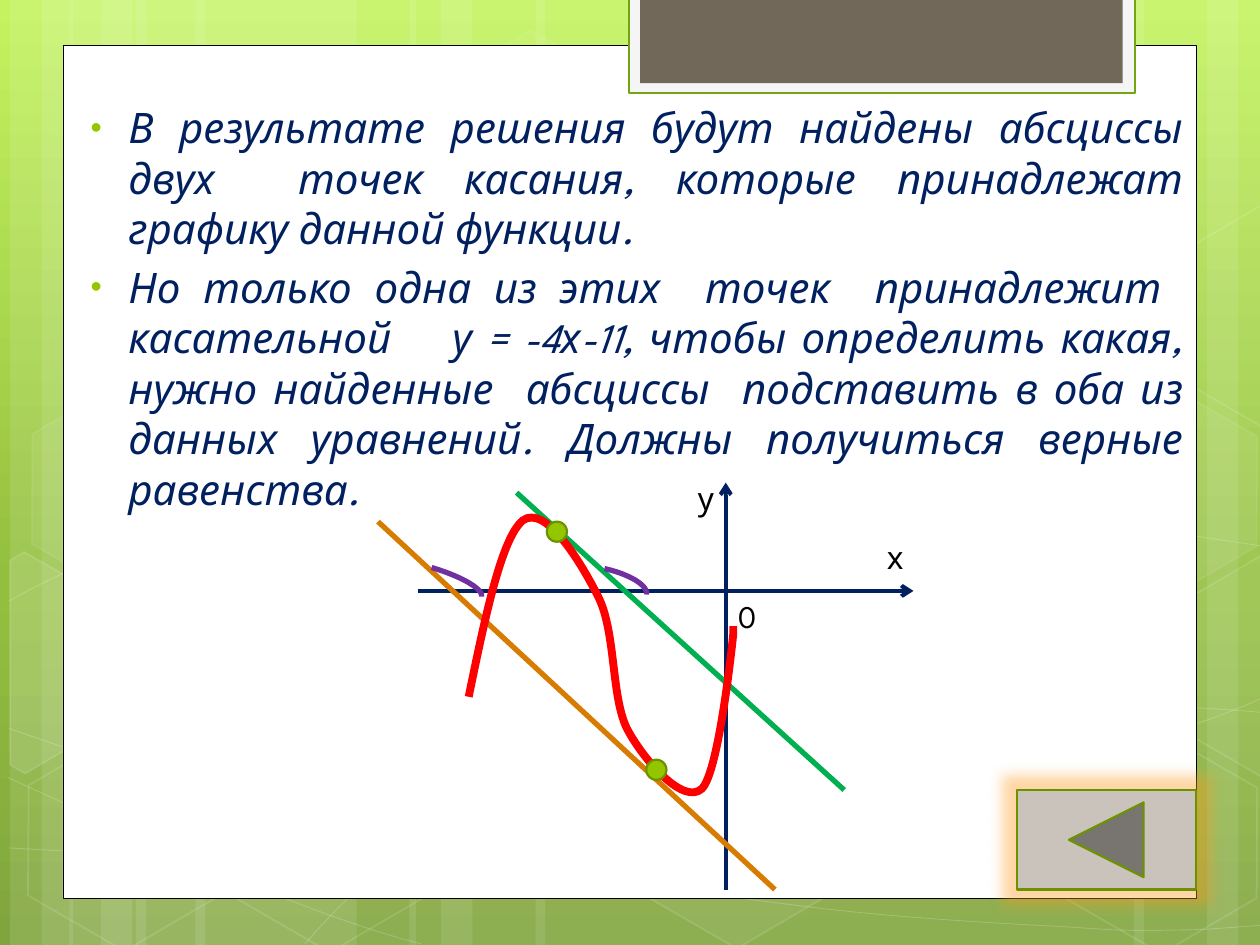
from copy import deepcopy

from lxml import etree
from pptx import Presentation
from pptx import util as u
from pptx.dml.color import RGBColor
from pptx.enum import shapes, text
from pptx.oxml import ns

PX = 9144  # EMU in one px, 100 px to the inch
FONT = "League Spartan"
C = {"white": "FFFFFF", "black": "000000", "navy": "002060", "red": "FF0000",
     "green": "00B050", "orange": "D77C01", "purple": "7030A0", "lime": "94C600",
     "olive": "6D9200", "tab": "F5F5F5", "tab_line": "74A510", "brown": "71685A",
     "stone": "C9C3BB", "glow": "FF9A1F"}
BACKGROUND = [(0, "C3F35F"), (0.62, "93BF3F"), (1, "81A53E")]
SHAPE = shapes.MSO_SHAPE

# left, width
BARS = [(108, 175), (8, 50), (33, 83), (155, 175), (55, 50), (80, 83),
        (733, 175), (958, 50), (900, 83), (425, 308), (325, 50), (350, 83)]
# left, top, fill opacity, line opacity
HEXAGONS = [(334, 36, 4, 8), (497, 589, 6, 12), (11, 591, 0, 12),
            (14, 312, 7, 8), (174, 592, 0, 12), (753, 453, 10, 12),
            (834, 593, 0, 12), (834, 314, 7, 8)]
# corners, fill opacity
CUT_HEXAGONS = [
    ([(8, 445), (19, 438), (96, 482), (95, 570), (20, 614), (8, 607)], 10),
    ([(926, 485), (1001, 441), (1009, 446), (1009, 613), (1002, 617), (926, 573)], 4),
    ([(926, 207), (1001, 163), (1010, 168), (1009, 335), (1002, 339), (926, 295)], 0)]
# Bezier chains: a start, then two handles and an end for each piece
WAVES = [
    [(7, 673), (61, 676), (115, 679), (190, 678), (265, 677), (358, 675), (458, 665),
     (558, 655), (700, 636), (792, 617), (883, 598), (977, 568), (1007, 551)],
    [(7, 477), (36, 461), (65, 446), (121, 431), (178, 416), (259, 394), (347, 387),
     (436, 380), (544, 379), (654, 387), (764, 395), (947, 426), (1007, 434)],
    [(6, 617), (127, 672), (247, 727), (334, 749)],
    [(7, 578), (38, 589), (70, 600), (128, 616), (186, 631), (273, 656), (357, 673),
     (440, 690), (545, 708), (628, 718), (711, 729), (800, 733), (853, 736),
     (905, 740), (919, 738), (945, 738), (971, 737), (989, 735), (1007, 734)],
    [(242, 749), (260, 729), (278, 709), (302, 691), (326, 673), (360, 653), (388, 639),
     (416, 625), (433, 619), (470, 609), (506, 599), (573, 585), (608, 578),
     (644, 571), (649, 571), (680, 569), (711, 566), (760, 563), (794, 562),
     (829, 561), (886, 562), (886, 562), (908, 562), (931, 562), (953, 562),
     (971, 563), (988, 564), (1006, 566)]]
CUBIC = [(72, 178), (85, 115), (98, 52), (115, 38), (133, 25), (161, 71), (175, 99),
         (189, 127), (185, 179), (198, 204), (212, 230), (243, 264), (257, 251),
         (271, 238), (282, 128), (282, 128), (282, 126), (282, 124), (282, 122)]
# runs of each paragraph: words, letter spacing in points
BODY = [
    [("В результате решения будут найдены абсциссы двух", 0), (" ", 24),
     ("точек касания, которые принадлежат графику данной функции.", 0)],
    [("Но только одна из этих", 0), (" ", 12.6), ("точек", 0), (" ", 12.6),
     ("принадлежи", 0), ("т", 12.6), (" касательной", 0), (" ", 26),
     ("у = -4х-11, чтобы определить какая, нужно найденные", 0), (" ", 9.3),
     ("абсциссы", 0), (" ", 9.3),
     ("подставить в оба из данных уравнений. Должны получиться верные равенства.", 0)]]


def add_xml(parent, tag, **attrs):
    return etree.SubElement(parent, ns.qn(tag), {k: str(v) for k, v in attrs.items()})


def set_all(obj, values):
    for name, value in values.items():
        setattr(obj, name, value)


def paint(fill, color, opacity=100):
    if not color or not opacity:
        fill.background()
        return
    fill.solid()
    fill.fore_color.rgb = RGBColor.from_string(C[color])
    if opacity < 100:
        clr = next(fill._xPr.iter(ns.qn("a:srgbClr")))
        add_xml(clr, "a:alpha", val=opacity * 1000)


def style(sp, fill=None, line=None, width=1, fill_op=100, line_op=100):
    sp.shadow.inherit = False
    paint(sp.fill, fill, fill_op)
    paint(sp.line.fill, line, line_op)
    if line:
        sp.line.width = u.Pt(width)
    return sp


def add_preset(s, kind, box, rot=0, **look):
    sp = s.shapes.add_shape(kind, *(v * PX for v in box))
    sp.rotation = rot
    return style(sp, **look)


def add_outline(s, x, y, points, close=False, **look):
    pts = [(x + a, y + b) for a, b in points]
    builder = s.shapes.build_freeform(*pts[0], scale=PX)
    builder.add_line_segments(pts[1:], close=close)
    return style(builder.convert_to_shape(), **look)


def add_curve(s, x, y, chain, **look):
    """Freeform whose points are joined, three at a time, into Bezier pieces."""
    sp = add_outline(s, x, y, chain, **look)
    segments = list(sp._element.iter(ns.qn("a:lnTo")))
    for i in range(0, len(segments), 3):
        piece = add_xml(segments[i].getparent(), "a:cubicBezTo")
        for segment in segments[i:i + 3]:
            piece.append(segment[0])
            segment.getparent().remove(segment)


def add_line(s, x1, y1, x2, y2, color, width, arrow=False):
    cn = s.shapes.add_connector(shapes.MSO_CONNECTOR.STRAIGHT,
                                *(v * PX for v in (x1, y1, x2, y2)))
    paint(cn.line.fill, color)
    cn.line.width = u.Pt(width)
    if arrow:
        add_xml(cn.line._get_or_add_ln(), "a:tailEnd", type="arrow")
    add_xml(cn._element.spPr, "a:effectLst")


def add_text(s, box, paragraphs, wrap, size, color, italic=False):
    tf = s.shapes.add_textbox(*(v * PX for v in box)).text_frame
    tf.word_wrap = wrap
    for i, runs in enumerate(paragraphs):
        p = tf.add_paragraph() if i else tf.paragraphs[0]
        for words, spacing in runs:
            r = p.add_run()
            r.text = words
            set_all(r.font, {"name": FONT, "size": u.Pt(size), "italic": italic})
            r.font.color.rgb = RGBColor.from_string(C[color])
            if spacing:
                r._r.get_or_add_rPr().set("spc", str(round(spacing * 100)))
    return tf


def backdrop(s, x, y, h):
    fill = s.background.fill
    fill.gradient()
    fill.gradient_angle = 270
    stops = fill.gradient_stops[0]._gs.getparent()
    stops.insert(1, deepcopy(stops[0]))
    for stop, (pos, color) in zip(fill.gradient_stops, BACKGROUND):
        stop.position = pos
        stop.color.rgb = RGBColor.from_string(color)
    for left, w in BARS:
        add_preset(s, SHAPE.RECTANGLE, (x + left, y, w, h), fill="white", fill_op=10)
    for wave in WAVES:
        add_curve(s, x, y, wave, line="white", width=0.5, line_op=20)
    for left, top, fill_op, line_op in HEXAGONS:
        sp = add_preset(s, SHAPE.HEXAGON, (x + left, y + top, 175, 152), rot=30,
                        fill="white", line="white", fill_op=fill_op, line_op=line_op)
        sp.adjustments[0] = 0.285
    for corners, fill_op in CUT_HEXAGONS:
        add_outline(s, x, y, corners, close=True,
                    fill="white", line="white", fill_op=fill_op, line_op=12)


def panel(s, x, y, w, h):
    """White sheet with the tab that hangs over its top edge."""
    add_preset(s, SHAPE.RECTANGLE, (x, y, w, h), fill="white", line="black", width=0.5)
    add_preset(s, SHAPE.RECTANGLE, (x + 449, y - 38, 402, 76),
               fill="tab", line="tab_line", width=1.25)
    add_preset(s, SHAPE.RECTANGLE, (x + 458, y - 38, 383, 68), fill="brown")


def body(s, *box):
    tf = add_text(s, box, BODY, True, 24, "navy", italic=True)
    for p in tf.paragraphs:
        set_all(p, {"alignment": text.PP_ALIGN.JUSTIFY, "space_before": u.Pt(4.8)})
        pPr = p._p.get_or_add_pPr()
        pPr.set("marL", str(38 * PX))
        pPr.set("indent", str(-30 * PX))
        add_xml(add_xml(pPr, "a:buClr"), "a:srgbClr", val=C["lime"])
        add_xml(pPr, "a:buSzPct", val=76000)
        add_xml(pPr, "a:buFont", typeface="Arial")
        add_xml(pPr, "a:buChar", char="•")


def graph(s, x, y):
    """Cubic curve, its two parallel tangents and the axes."""
    for x1, y1, x2, y2, color, width, arrow in [
            (276, 331, 276, 8, "navy", 2.25, True),
            (32, 94, 425, 94, "navy", 2.25, True),
            (110, 16, 370, 252, "green", 3, False),
            (0, 39, 315, 331, "orange", 3, False)]:
        add_line(s, x + x1, y + y1, x + x2, y + y2, color, width, arrow)
    for label, left, top, w in [("у", 244, 0, 24), ("х", 394, 47, 24), ("0", 276, 94, 31)]:
        add_text(s, (x + left, y + top, w, 40), [[(label, 0)]], False, 18, "black")
    for left, top, w, h, rot in [(140, 76, 74, 26, 12.3), (-5, 75, 89, 22, 16.3)]:
        add_preset(s, SHAPE.ARC, (x + left, y + top, w, h), rot, line="purple", width=3)
    add_curve(s, x, y, CUBIC, line="red", width=4.5)
    for left, top in [(213, 228), (134, 39)]:
        add_preset(s, SHAPE.OVAL, (x + left, y + top, 16, 16),
                   fill="lime", line="olive", width=1.25)


def back_button(s, *box):
    sp = add_preset(s, SHAPE.ACTION_BUTTON_BACK_OR_PREVIOUS, box,
                    fill="stone", line="olive", width=1.25)
    effects = sp._element.spPr.find(ns.qn("a:effectLst"))
    glow = add_xml(effects, "a:glow", rad=22 * PX)
    add_xml(add_xml(glow, "a:srgbClr", val=C["glow"]), "a:alpha", val=40000)


def main():
    prs = Presentation()
    set_all(prs, {"slide_width": 1000 * PX, "slide_height": 750 * PX})
    s = prs.slides.add_slide(prs.slide_layouts[6])
    backdrop(s, 0, 0, 750)
    panel(s, 50, 36, 900, 677)
    body(s, 54, 76, 895, 650)
    graph(s, 300, 375)
    back_button(s, 807, 627, 142, 79)
    prs.save("out.pptx")


if __name__ == "__main__":
    main()
